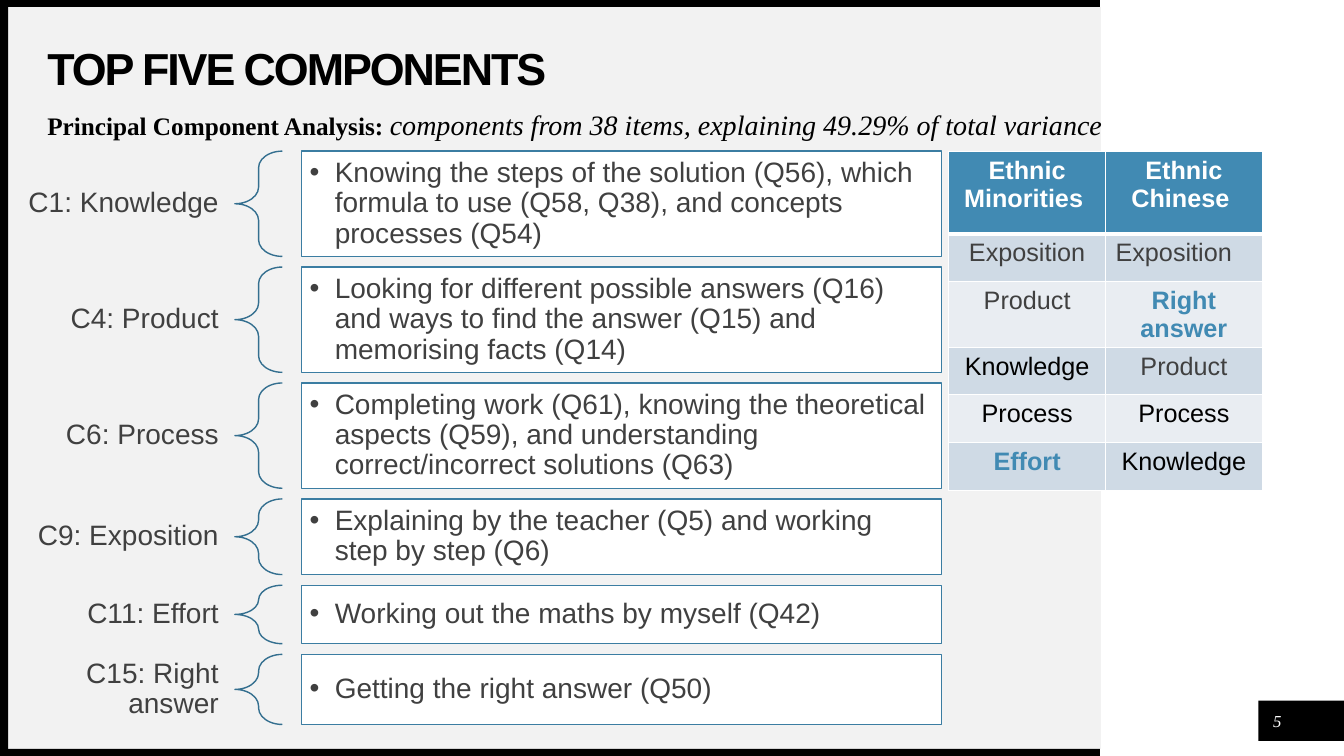
from lxml.etree import SubElement
from pptx import Presentation
from pptx.dml.color import RGBColor
from pptx.enum.shapes import MSO_SHAPE as Shape
from pptx.enum.text import MSO_ANCHOR as Anchor, PP_ALIGN as Align
from pptx.oxml import parse_xml
from pptx.oxml.ns import nsdecls, qn
from pptx.util import Inches, Pt

COLORS = {
    "black": "000000", "white": "FFFFFF", "panel": "F2F2F2", "text": "404040",
    "brace": "346F8F", "box": "3B7DA2", "accent": "418AB3",
    "band_dark": "CFDAE5", "band_light": "E9EDF2",
}
COLUMNS, ROWS = 133.3, 75
GAP = 1.06
FIRST_ROW = 15

COMPONENTS = [
    ("C1: Knowledge", 10.44, "Knowing the steps of the solution (Q56), which formula "
     "to use (Q58, Q38), and concepts processes (Q54)"),
    ("C4: Product", 10.44, "Looking for different possible answers (Q16) and ways "
     "to find the answer (Q15) and memorising facts (Q14)"),
    ("C6: Process", 10.44, "Completing work (Q61), knowing the theoretical aspects "
     "(Q59), and understanding correct/incorrect solutions (Q63)"),
    ("C9: Exposition", 7.5, "Explaining by the teacher (Q5) and working step by step (Q6)"),
    ("C11: Effort", 5.8, "Working out the maths by myself (Q42)"),
    ("C15: Right answer", 6.95, "Getting the right answer (Q50)"),
]
RANKING = [
    [("Ethnic Minorities ", "white"), ("Ethnic Chinese ", "white")],
    [("Exposition", "text"), ("Exposition", "text")],
    [("Product", "text"), ("Right answer", "accent")],
    [("Knowledge", "black"), ("Product", "text")],
    [("Process", "black"), ("Process", "black")],
    [("Effort", "accent"), ("Knowledge", "black")],
]


def rgb(name):
    return RGBColor.from_string(COLORS[name])


def write_text(paragraph, text, size=20, font="Arial", color="text", bold=False,
               italic=False, align=None, line_spacing=None, tracking=None):
    run = paragraph.add_run()
    run.text = text
    run.font.name = font
    run.font.size = Pt(size)
    run.font.bold = bold
    run.font.italic = italic
    run.font.color.rgb = rgb(color)
    if tracking:
        run.font._element.set("spc", str(round(tracking * 100)))
    if align is not None:
        paragraph.alignment = align
    if line_spacing is not None:
        paragraph.line_spacing = line_spacing


class ComponentSlide:
    def __init__(self):
        self.presentation = Presentation()
        self.presentation.slide_width = Inches(13.33)
        self.presentation.slide_height = Inches(7.5)
        self.slide = self.presentation.slides.add_slide(self.presentation.slide_layouts[6])

    def x(self, columns):
        return round(self.presentation.slide_width * columns / COLUMNS)

    def y(self, rows):
        return round(self.presentation.slide_height * rows / ROWS)

    def place(self, left, top, width, height):
        return self.x(left), self.y(top), self.x(width), self.y(height)

    def frame(self, shape, anchor, insets):
        frame = shape.text_frame
        frame.word_wrap = True
        frame.vertical_anchor = anchor
        frame.margin_left, frame.margin_top, frame.margin_right, frame.margin_bottom = (
            Inches(inset) for inset in insets)
        return frame

    def shape(self, kind, area, fill=None, line=None):
        shape = self.slide.shapes.add_shape(kind, *self.place(*area))
        shape.shadow.inherit = False
        if fill:
            shape.fill.solid()
            shape.fill.fore_color.rgb = rgb(fill)
        else:
            shape.fill.background()
        if line:
            shape.line.color.rgb = rgb(line)
            shape.line.width = Pt(1)
        else:
            shape.line.fill.background()
        return shape

    def text(self, area, *runs, anchor=Anchor.MIDDLE, insets=(0, 0, 0, 0)):
        box = self.slide.shapes.add_textbox(*self.place(*area))
        paragraph = self.frame(box, anchor, insets).paragraphs[0]
        for text, style in runs:
            write_text(paragraph, text, **style)

    def brace(self, area):
        brace = self.shape(Shape.LEFT_BRACE, area, line="brace")
        brace.adjustments[0] = 0.35
        brace.adjustments[1] = 0.5

    def bullet_box(self, area, text):
        box = self.shape(Shape.RECTANGLE, area, fill="white", line="box")
        paragraph = self.frame(box, Anchor.MIDDLE, (0.08,) * 4).paragraphs[0]
        properties = paragraph._p.get_or_add_pPr()
        properties.set("marL", str(Inches(0.25)))
        properties.set("indent", str(-Inches(0.25)))
        SubElement(properties, qn("a:buFont")).set("typeface", "Arial")
        SubElement(properties, qn("a:buChar")).set("char", "•")
        write_text(paragraph, text, align=Align.LEFT, line_spacing=0.9)

    def component(self, top, height, label, text):
        label_style = dict(align=Align.RIGHT, line_spacing=0.9)
        self.text((0, top, 23.3, height), (label, label_style),
                  insets=(0.16, 0.06, 0.16, 0.06))
        self.brace((23.3, top, 4.7, height))
        self.bullet_box((29.9, top, 63.5, height), text)

    def borders(self, cell, bottom):
        properties = cell._tc.get_or_add_tcPr()
        widths = {"lnL": 1, "lnR": 1, "lnT": 1, "lnB": bottom}
        for index, (side, width) in enumerate(widths.items()):
            properties.insert(index, parse_xml(
                f'<a:{side} {nsdecls("a")} w="{Pt(width)}"><a:solidFill>'
                f'<a:srgbClr val="{COLORS["white"]}"/></a:solidFill></a:{side}>'))

    def table(self, area, header_height, rows):
        table = self.slide.shapes.add_table(
            len(rows), len(rows[0]), *self.place(*area)).table
        body_height = (area[3] - header_height) / (len(rows) - 1)
        for row_index, row in enumerate(rows):
            header = row_index == 0
            table.rows[row_index].height = self.y(header_height if header else body_height)
            band = "accent" if header else ("band_light", "band_dark")[row_index % 2]
            for column_index, (text, color) in enumerate(row):
                cell = table.cell(row_index, column_index)
                cell.margin_bottom = 0
                cell.fill.solid()
                cell.fill.fore_color.rgb = rgb(band)
                self.borders(cell, 3 if header else 1)
                left = (row_index, column_index) == (1, 1)
                write_text(cell.text_frame.paragraphs[0], text, size=18, color=color,
                           bold=color in ("white", "accent"),
                           align=Align.LEFT if left else Align.CENTER)

    def save(self):
        self.presentation.save("out.pptx")


def main():
    page = ComponentSlide()
    page.shape(Shape.RECTANGLE, (0.8, 0.7, 108.4, 73.6), fill="panel")
    for area in [(124.8, 69.5, 8.5, 4), (0, 74.3, 109.1, 0.7),
                 (0, 0, 109.1, 0.7), (0, 0, 0.8, ROWS)]:
        page.shape(Shape.RECTANGLE, area, fill="black")

    page.text((4.7, 4.7, 100.6, 4.7), ("TOP FIVE COMPONENTS", dict(
        size=32, color="black", bold=True, tracking=-1.5, line_spacing=0.9)))
    serif = dict(font="Times New Roman", color="black", line_spacing=0.9)
    page.text((4.7, 11, 109.8, 3.9),
              ("Principal Component Analysis: ", dict(serif, size=18, bold=True)),
              ("components from 38 items, explaining 49.29% of total variance",
               dict(serif, italic=True)), anchor=Anchor.TOP)
    page.text((125.2, 70, 3, 3), ("5", dict(
        size=12, font="Times New Roman", color="white", italic=True, align=Align.CENTER)))

    top = FIRST_ROW
    for label, height, text in COMPONENTS:
        page.component(top, height, label, text)
        top += height + GAP
    page.table((94.1, FIRST_ROW, 31.1, 31.9), 8.2, RANKING)
    page.save()


if __name__ == "__main__":
    main()
